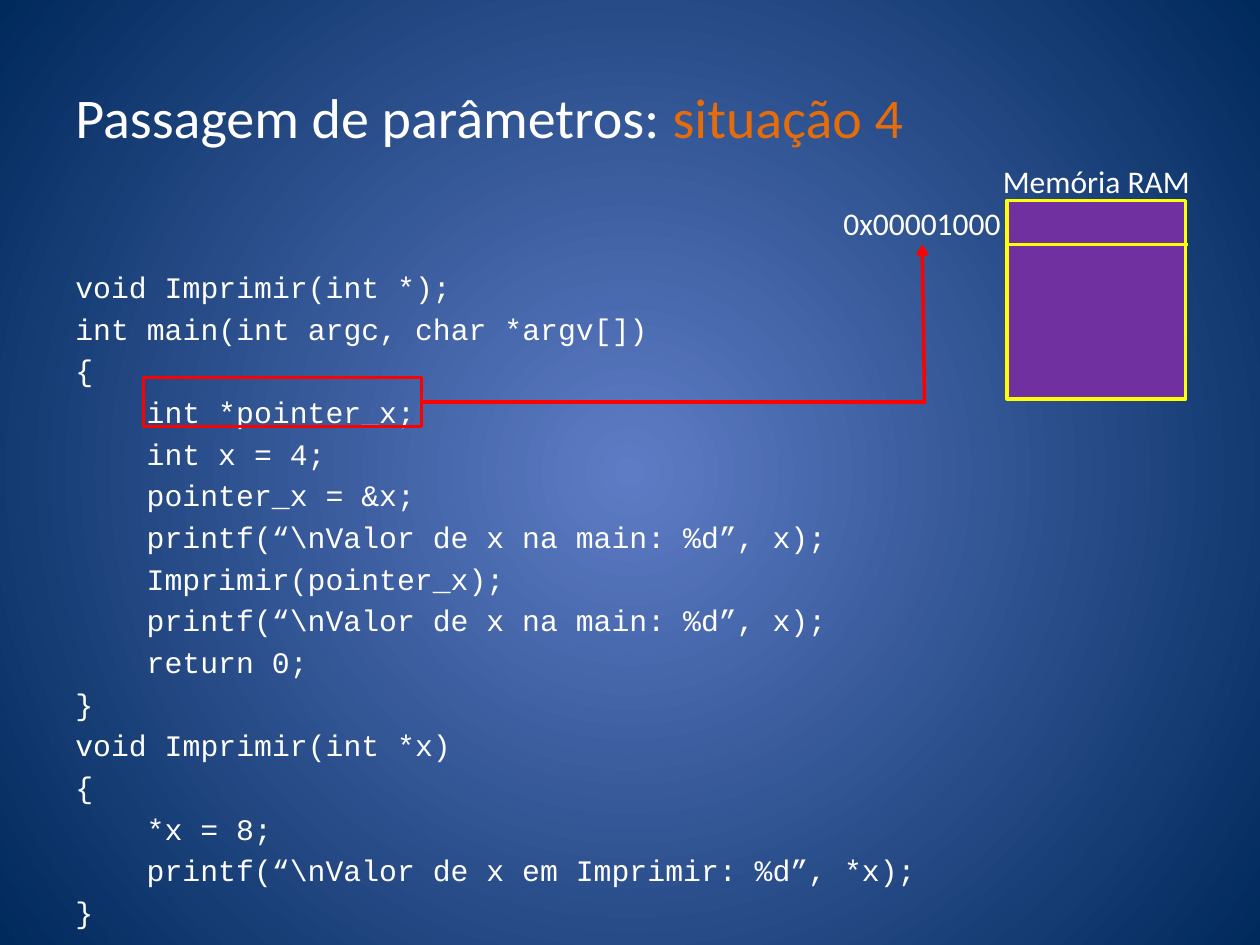
"""Build the slide on passing a pointer as a parameter."""
from lxml.etree import SubElement
from pptx import Presentation
from pptx.dml.color import RGBColor
from pptx.enum.shapes import MSO_CONNECTOR, MSO_SHAPE
from pptx.enum.text import MSO_ANCHOR, PP_ALIGN
from pptx.oxml.ns import qn
from pptx.util import Pt

WHITE = RGBColor(0xFF, 0xFF, 0xFF)
ORANGE = RGBColor(0xE4, 0x6C, 0x0A)
RED = RGBColor(0xFF, 0x00, 0x00)
YELLOW = RGBColor(0xFF, 0xFF, 0x00)
PURPLE = RGBColor(0x70, 0x30, 0xA0)
LIGHT_BLUE = RGBColor(0x5E, 0x7C, 0xC5)
DARK_BLUE = RGBColor(0x00, 0x29, 0x5C)

TITLE = [("Passagem de parâmetros: ", WHITE), ("situação 4", ORANGE)]
CODE = [
    (0, "void Imprimir(int *);"),
    (0, "int main(int argc, char *argv[])"),
    (0, "{"),
    (1, "int *pointer_x;"),
    (1, "int x = 4;"),
    (1, "pointer_x = &x;"),
    (1, "printf(“\\nValor de x na main: %d”, x);"),
    (1, "Imprimir(pointer_x);"),
    (1, "printf(“\\nValor de x na main: %d”, x);"),
    (1, "return 0;"),
    (0, "}"),
    (0, "void Imprimir(int *x)"),
    (0, "{"),
    (1, "*x = 8;"),
    (1, "printf(“\\nValor de x em Imprimir: %d”, *x);"),
    (0, "}"),
]
LABELS = [
    ("0x00001000", (467.4, 115, 119, 25)),
    ("Memória RAM", (541.5, 92, 170, 22.5)),
]
INDENT = 40.8
DIVIDER_Y = 139.7


def paint_background(page):
    fill = page.background.fill
    fill.gradient()
    for stop, color in zip(fill.gradient_stops, (LIGHT_BLUE, DARK_BLUE)):
        stop.color.rgb = color
    gradient = page.background._cSld.find(".//" + qn("a:gradFill"))
    gradient.remove(gradient.find(qn("a:lin")))
    circle = SubElement(gradient, qn("a:path"), {"path": "circle"})
    sides = {side: "50000" for side in "ltrb"}
    SubElement(circle, qn("a:fillToRect"), sides)


def add_text(page, place, lines, size=18, font="Calibri", align=PP_ALIGN.LEFT,
             anchor=MSO_ANCHOR.MIDDLE, gap=0, inset=7.2):
    box = page.shapes.add_textbox(*map(Pt, place))
    frame = box.text_frame
    frame.word_wrap = True
    frame.vertical_anchor = anchor
    frame.margin_left = frame.margin_right = Pt(inset)
    frame.margin_top = frame.margin_bottom = Pt(inset / 2)
    for number, (level, spans) in enumerate(lines):
        para = frame.add_paragraph() if number else frame.paragraphs[0]
        para.alignment = align
        para.space_before = Pt(gap if number else 0)
        if level:
            para._p.get_or_add_pPr().set("marL", str(Pt(level * INDENT)))
        for text, color in spans:
            span = para.add_run()
            span.text = text
            span.font.name = font
            span.font.size = Pt(size)
            span.font.color.rgb = color


def add_rectangle(page, place, line, fill=None):
    box = page.shapes.add_shape(MSO_SHAPE.RECTANGLE, *map(Pt, place))
    box.shadow.inherit = False
    box.line.color.rgb = line
    box.line.width = Pt(2)
    if fill is None:
        box.fill.background()
    else:
        box.fill.solid()
        box.fill.fore_color.rgb = fill
    return box


def add_line(page, start, end, color, arrow=False):
    line = page.shapes.add_connector(MSO_CONNECTOR.STRAIGHT, *map(Pt, start + end))
    line.line.color.rgb = color
    line.line.width = Pt(2)
    SubElement(line._element.spPr, qn("a:effectLst"))
    if arrow:
        SubElement(line.line._get_or_add_ln(), qn("a:tailEnd"), {"type": "arrow"})
    return line


def main():
    deck = Presentation()
    deck.slide_width, deck.slide_height = Pt(720), Pt(540)
    page = deck.slides.add_slide(deck.slide_layouts[6])
    paint_background(page)

    add_text(page, (36, 21.6, 648, 90), [(0, TITLE)], size=32)
    code = [(level, [(text, WHITE)]) for level, text in CODE]
    add_text(page, (36, 150, 648, 388), code, size=17, font="Courier New",
             anchor=MSO_ANCHOR.TOP, gap=3.4)

    declaration = add_rectangle(page, (82, 215.8, 159, 28), RED)
    link = add_line(page, (241, 229.8), (529, 229.8), RED)
    link.begin_connect(declaration, 3)
    add_line(page, (528.3, 229.8), (527, DIVIDER_Y), RED, arrow=True)

    add_rectangle(page, (575.5, 114.5, 102, 113.5), YELLOW, PURPLE)
    add_line(page, (576.5, DIVIDER_Y), (679, DIVIDER_Y), YELLOW)
    for text, place in LABELS:
        add_text(page, place, [(0, [(text, WHITE)])], align=PP_ALIGN.CENTER, inset=0)

    deck.save("out.pptx")


if __name__ == "__main__":
    main()
